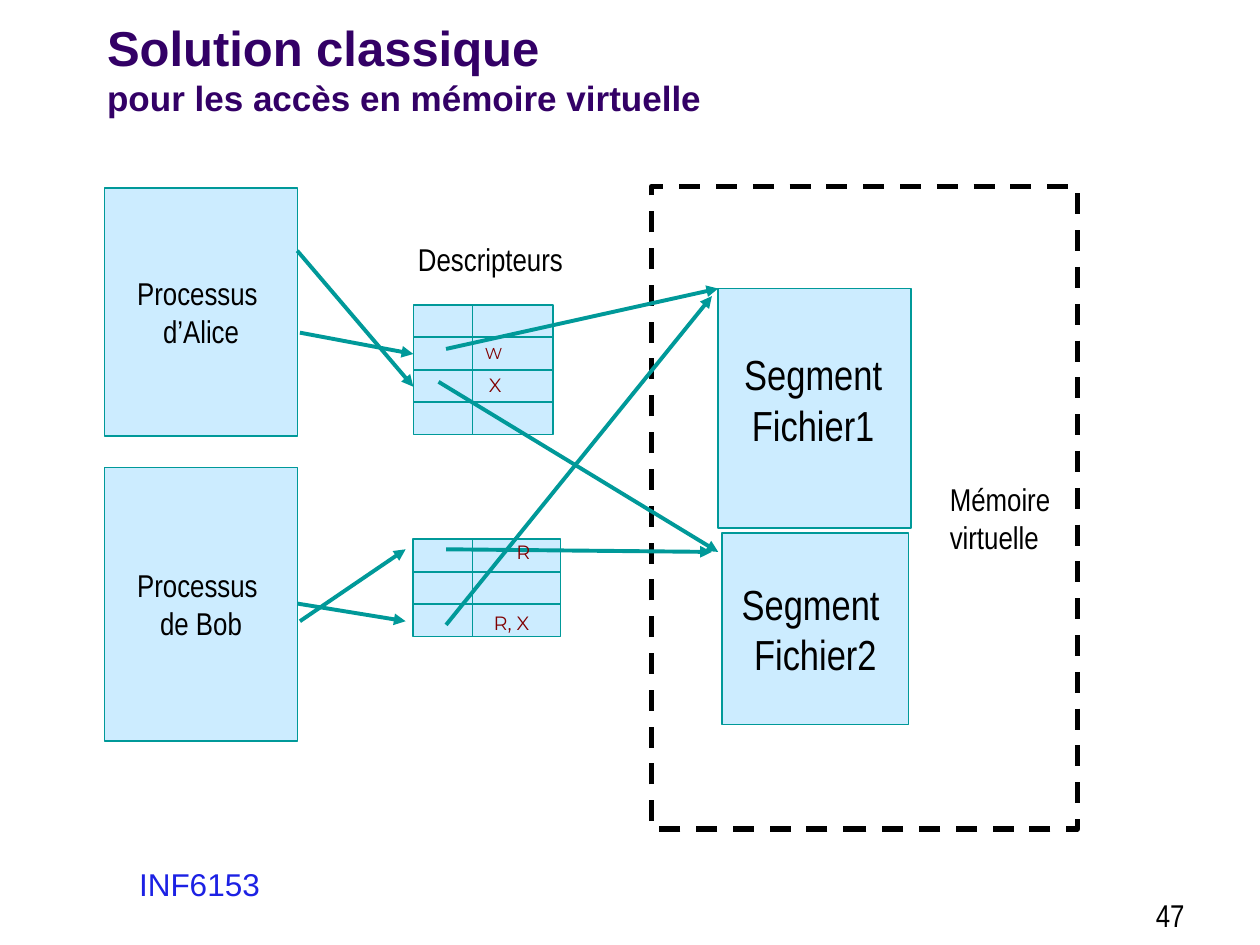
from copy import deepcopy
from dataclasses import dataclass
from typing import NamedTuple, Optional

from pptx import Presentation
from pptx.dml.color import RGBColor
from pptx.enum import dml, shapes, text
from pptx.oxml import ns, xmlchemy
from pptx.util import Pt


@dataclass(frozen=True)
class Theme:
    ink: str = "000000"
    paper: str = "FFFFFF"
    teal: str = "009999"
    pale: str = "CCECFF"
    title: str = "330066"
    course: str = "1C21E4"
    rights: str = "800000"
    sans: str = "Arial"
    narrow: str = "Arial Narrow"
    rights_font: str = "Montserrat"
    title_size: float = 28
    subtitle_size: float = 20
    segment_size: float = 24
    label_size: float = 18
    rights_size: float = 11
    small_rights_size: float = 9
    thin: float = 1
    arrow: float = 2.25
    dashed: float = 3


class Area(NamedTuple):
    left: float
    top: float
    width: float
    height: float


class Block(NamedTuple):
    area: Area
    lines: tuple
    size: float


class DescriptorTable(NamedTuple):
    top: float
    width: float
    rows: int


class Label(NamedTuple):
    area: Area
    lines: tuple
    format: dict


class Arrow(NamedTuple):
    start: tuple
    end: tuple


THEME = Theme()
LEFT, CENTER, RIGHT = text.PP_ALIGN.LEFT, text.PP_ALIGN.CENTER, text.PP_ALIGN.RIGHT
TABLE_LEFT, DIVIDER, ROW_HEIGHT = 236.2, 270, 18.55
RIGHTS = dict(font=THEME.rights_font, size=THEME.rights_size, color=THEME.rights)

MEMORY = Area(372.2, 106.6, 243.4, 367.2)
SEGMENT_1 = Block(Area(410.4, 164.9, 110.2, 136.8), (), THEME.segment_size)
SEGMENT_2 = Block(Area(412.6, 304.6, 106.6, 109.4),
                  ("Segment ", "Fichier2"), THEME.segment_size)
PROCESSES = [
    Block(Area(59.8, 107.3, 110.2, 141.8), ("Processus ", "d’Alice"), THEME.label_size),
    Block(Area(59.8, 267.1, 110.2, 156.2), ("Processus ", "de Bob"), THEME.label_size),
]
TABLES = [DescriptorTable(174.2, 79.9, 4), DescriptorTable(308.2, 84.2, 3)]
ARROWS = [
    # Processes to descriptors
    Arrow((171.4, 190.1), (236.2, 202.3)),
    Arrow((169.9, 143.3), (236.2, 221)),
    Arrow((169.9, 344.9), (231.8, 355)),
    Arrow((171.4, 355), (231.8, 313.9)),
    # Descriptors to segments
    Arrow((254.9, 199.4), (410.4, 164.9)),
    Arrow((254.9, 357.1), (406.8, 169.2)),
    Arrow((250.6, 218.2), (410.4, 315.4)),
    Arrow((254.9, 313.9), (406.8, 315.4)),
]
LABELS = [
    Label(Area(0, 491, 228, 36), ("INF6153",),
          dict(font=THEME.sans, color=THEME.course, align=CENTER)),
    Label(Area(516.2, 508.3, 167.8, 41.8), ("47",), dict(align=RIGHT)),
    Label(Area(231.8, 133.9, 97.9, 28.8), ("Descripteurs",), dict(wrap=False)),
    Label(Area(535.7, 270.7, 76.3, 51.1), ("Mémoire", "virtuelle"), dict(wrap=False)),
    Label(Area(411.8, 195.8, 105.8, 67), ("Segment", "Fichier1"),
          dict(size=THEME.segment_size, align=CENTER)),
    Label(Area(270, 193, 45.4, 18.7), ("W",),
          RIGHTS | dict(size=THEME.small_rights_size)),
    Label(Area(272.2, 209.5, 43.9, 20.9), ("X",), RIGHTS),
    Label(Area(288, 305.3, 43.9, 20.9), ("R",), RIGHTS),
    Label(Area(275, 345.6, 43.9, 20.9), ("R, X",), RIGHTS),
]


def points(values) -> list:
    return [Pt(value) for value in values]


def add_text(paragraph, words: str, *, font: str = THEME.narrow,
             size: float = THEME.label_size, color: str = THEME.ink, bold: bool = False):
    run = paragraph.add_run()
    run.text = words
    run.font.name, run.font.size, run.font.bold = font, Pt(size), bold
    run.font.color.rgb = RGBColor.from_string(color)
    return run


def write(frame, lines: tuple, *, align=LEFT, anchor=text.MSO_ANCHOR.TOP,
          wrap: bool = True, **font_format) -> None:
    frame.word_wrap, frame.vertical_anchor = wrap, anchor
    for index, line in enumerate(lines):
        paragraph = frame.add_paragraph() if index else frame.paragraphs[0]
        paragraph.alignment = align
        add_text(paragraph, line, **font_format)


def draw_title(slide) -> None:
    title = slide.shapes.title
    title.left, title.top, title.width, title.height = points((54, -18.7, 612, 90))
    frame = title.text_frame
    frame.auto_size = text.MSO_AUTO_SIZE.NONE
    style = dict(font=THEME.sans, color=THEME.title, bold=True)
    write(frame, ("Solution classique",), anchor=text.MSO_ANCHOR.BOTTOM,
          size=THEME.title_size, **style)
    paragraph = frame.paragraphs[0]
    paragraph.add_line_break()
    subtitle = add_text(paragraph, "pour les accès en mémoire virtuelle",
                        size=THEME.subtitle_size, **style)
    # The line break takes the subtitle's format
    line_break = paragraph._p.find(ns.qn("a:br"))
    line_break.append(deepcopy(subtitle._r.find(ns.qn("a:rPr"))))


def draw_box(slide, area: Area, fill: str = THEME.pale, line: str = THEME.teal,
             weight: float = THEME.thin, dash: Optional[dml.MSO_LINE] = None):
    box = slide.shapes.add_shape(shapes.MSO_SHAPE.RECTANGLE, *points(area))
    box.shadow.inherit = False
    box.fill.solid()
    box.fill.fore_color.rgb = RGBColor.from_string(fill)
    box.line.color.rgb = RGBColor.from_string(line)
    box.line.width = Pt(weight)
    if dash:
        box.line.dash_style = dash
    return box


def draw_block(slide, block: Block) -> None:
    box = draw_box(slide, block.area)
    write(box.text_frame, block.lines, size=block.size, align=CENTER,
          anchor=text.MSO_ANCHOR.MIDDLE, wrap=False)


def draw_line(slide, start: tuple, end: tuple, weight: float, arrow: bool = False) -> None:
    line = slide.shapes.add_connector(shapes.MSO_CONNECTOR.STRAIGHT, *points(start + end))
    line.line.color.rgb = RGBColor.from_string(THEME.teal)
    line.line.width = Pt(weight)
    if arrow:
        head = xmlchemy.OxmlElement("a:tailEnd")
        head.set("type", "triangle")
        line.line._get_or_add_ln().append(head)
    line._element.spPr.append(xmlchemy.OxmlElement("a:effectLst"))


def draw_table(slide, table: DescriptorTable) -> None:
    for row in range(table.rows):
        draw_box(slide, Area(TABLE_LEFT, table.top + row * ROW_HEIGHT,
                             table.width, ROW_HEIGHT))
    bottom = table.top + table.rows * ROW_HEIGHT
    draw_line(slide, (DIVIDER, table.top), (DIVIDER, bottom), THEME.thin)


def draw_label(slide, label: Label) -> None:
    box = slide.shapes.add_textbox(*points(label.area))
    write(box.text_frame, label.lines, **label.format)


def main() -> None:
    deck = Presentation()
    deck.slide_width, deck.slide_height = points((720, 540))
    slide = deck.slides.add_slide(deck.slide_layouts[5])
    draw_title(slide)

    # Virtual memory, its segments and the processes
    draw_box(slide, MEMORY, THEME.paper, THEME.ink, THEME.dashed, dml.MSO_LINE.DASH)
    for block in (SEGMENT_1, SEGMENT_2, *PROCESSES):
        draw_block(slide, block)

    # Descriptor tables and access paths
    for table in TABLES:
        draw_table(slide, table)
    for arrow in ARROWS:
        draw_line(slide, arrow.start, arrow.end, THEME.arrow, arrow=True)

    # Captions, access rights, course code and page number
    for label in LABELS:
        draw_label(slide, label)
    deck.save("out.pptx")


if __name__ == "__main__":
    main()
